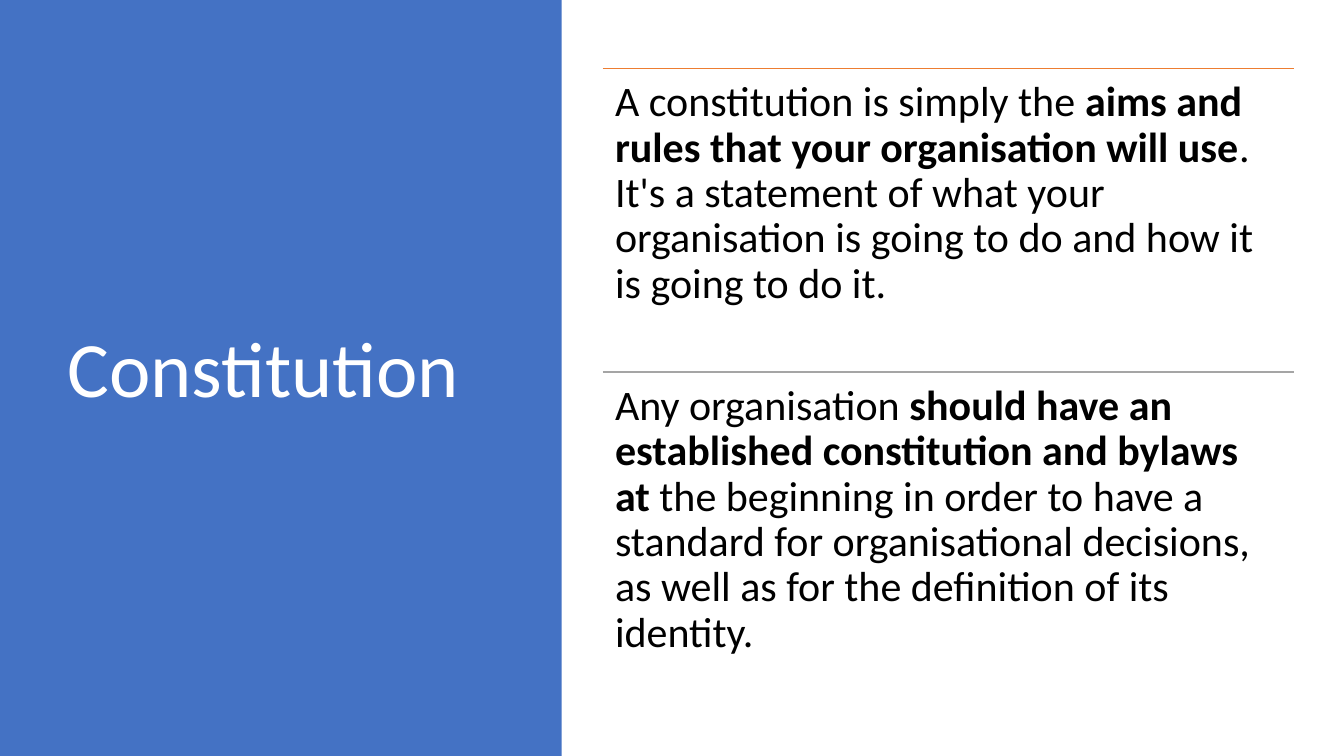
from lxml.etree import SubElement
from pptx import Presentation
from pptx.dml.color import RGBColor
from pptx.enum.shapes import MSO_CONNECTOR, MSO_SHAPE
from pptx.enum.text import MSO_ANCHOR
from pptx.oxml.ns import qn
from pptx.util import Inches, Pt

TITLE = [("Constitution", False)]
SECTIONS = [
    ("ED7D31", [
        ("A constitution is simply the ", False),
        ("aims and rules that your organisation will use", True),
        (". It's a statement of what your organisation is going to do "
         "and how it is going to do it.", False),
    ]),
    ("A5A5A5", [
        ("Any organisation ", False),
        ("should have an established constitution and bylaws at", True),
        (" the beginning in order to have a standard for organisational decisions, "
         "as well as for the definition of its identity.", False),
    ]),
]
TITLE_FORMAT = {"name": "Calibri", "size": Pt(56)}
BODY_FORMAT = {"name": "Calibri", "size": Pt(30)}
PANEL_WIDTH = 5.57
TOP, LEFT, WIDTH, ROW_HEIGHT = 0.68, 5.98, 6.85, 3.01


def color(value):
    return RGBColor.from_string(value)


def add_text(page, area, spans, font_format, ink, insets, anchor):
    box = page.shapes.add_textbox(*map(Inches, area))
    frame = box.text_frame
    frame_format = {"word_wrap": True, "vertical_anchor": anchor}
    sides = ("margin_left", "margin_top", "margin_right", "margin_bottom")
    frame_format.update(zip(sides, map(Inches, insets)))
    for name, value in frame_format.items():
        setattr(frame, name, value)
    para = frame.paragraphs[0]
    para.line_spacing = 0.9
    for text, bold in spans:
        span = para.add_run()
        span.text = text
        for name, value in {**font_format, "bold": bold}.items():
            setattr(span.font, name, value)
        span.font.color.rgb = color(ink)


def add_rule(page, top, ink):
    rule = page.shapes.add_connector(
        MSO_CONNECTOR.STRAIGHT, Inches(LEFT), Inches(top), Inches(LEFT + WIDTH), Inches(top))
    rule.line.color.rgb = color(ink)
    rule.line.width = Pt(1)
    SubElement(rule._element.spPr, qn("a:effectLst"))


def main():
    deck = Presentation()
    deck.slide_width, deck.slide_height = Inches(13.33), Inches(7.5)
    page = deck.slides.add_slide(deck.slide_layouts[6])

    panel = page.shapes.add_shape(
        MSO_SHAPE.RECTANGLE, 0, 0, Inches(PANEL_WIDTH), deck.slide_height)
    panel.shadow.inherit = False
    panel.fill.solid()
    panel.fill.fore_color.rgb = color("4472C4")
    panel.line.fill.background()

    add_text(page, (0.57, TOP, 4.16, 2 * ROW_HEIGHT), TITLE, TITLE_FORMAT,
             "FFFFFF", (0.1, 0.05, 0.1, 0.05), MSO_ANCHOR.MIDDLE)
    for row, (ink, spans) in enumerate(SECTIONS):
        top = TOP + row * ROW_HEIGHT
        add_rule(page, top, ink)
        add_text(page, (LEFT, top, WIDTH, ROW_HEIGHT), spans, BODY_FORMAT,
                 "000000", (0.12,) * 4, MSO_ANCHOR.TOP)

    deck.save("out.pptx")


if __name__ == "__main__":
    main()
